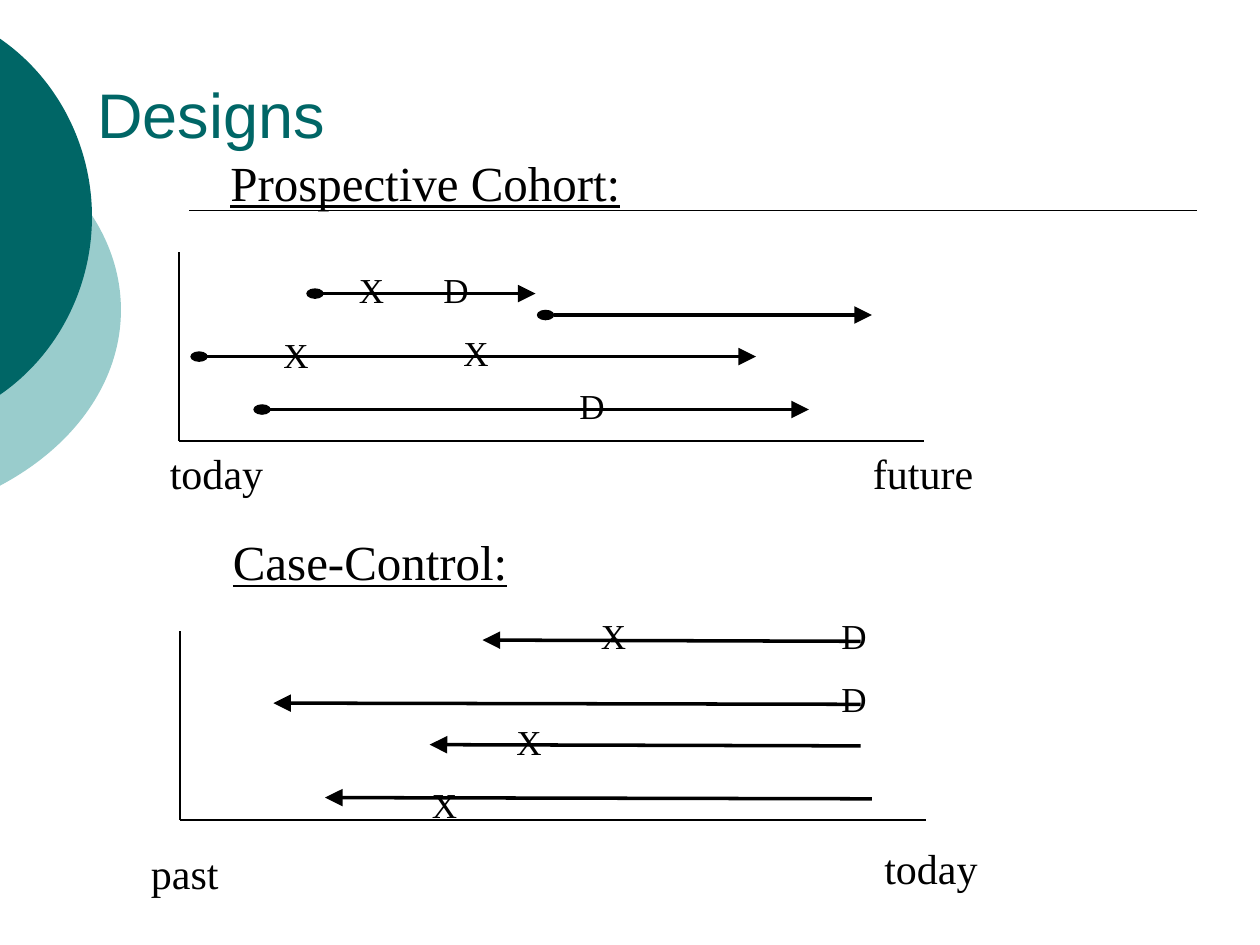
"""Build the slide on prospective cohort and case-control study designs."""
import lxml.etree
import pptx
import pptx.dml.color
import pptx.enum.shapes
import pptx.enum.text
import pptx.oxml.ns
import pptx.util

INK = {"black": "000000", "teal": "006666", "pale": "99CCCC"}
SERIF = "Times New Roman"
WIDE, HIGH = 10, 7.5
LINE_H = {20: 0.43, 24: 0.5, 28: 0.57}

ARCS = [
    ("pale", (-3.54, 0.75, 4.5, 3.42),
     [(-0.01, 1.06), (0.6, 1.38), (0.96, 1.9), (0.96, 2.46)]),
    ("teal", (-2.65, 0, 3.38, 3.45),
     [(-0.01, 0.3), (0.46, 0.62), (0.73, 1.16), (0.73, 1.72)]),
]
RULE = (1.5, 1.67, 9.5, 1.67)
OVAL = {"type": "oval", "w": "med", "len": "lg"}
ARROW = {"type": "triangle", "w": "lg", "len": "lg"}
PANELS = [
    {
        "head": ("Prospective Cohort:", 1.73, 1.16, 3.3),
        "axis": (1.42, 2, 5.91, 1.5),
        "ends": [("today", 1.25, 3.5, 0.94), ("future", 6.83, 3.5, 1)],
        "start": OVAL,
        "spans": [(2.5, 2.33, 4.25, 2.33), (4.33, 2.5, 6.92, 2.5),
                  (1.58, 2.83, 6, 2.83), (2.08, 3.25, 6.42, 3.25)],
        "marks": [("X", 2.75, 2.08, 0.4), ("D", 3.42, 2.08, 0.42),
                  ("X", 2.15, 2.6, 0.4), ("X", 3.58, 2.58, 0.4),
                  ("D", 4.5, 3, 0.33)],
    },
    {
        "head": ("Case-Control:", 1.75, 4.17, 2.38),
        "axis": (1.43, 5.01, 5.92, 1.5),
        "ends": [("past", 1.1, 6.68, 0.74), ("today", 6.92, 6.64, 0.94)],
        "start": None,
        "spans": [(6.83, 5.09, 3.83, 5.08), (6.83, 5.59, 2.17, 5.58),
                  (6.83, 5.92, 3.41, 5.91), (6.92, 6.34, 2.58, 6.33)],
        "marks": [("X", 4.67, 4.83, 0.4), ("D", 6.58, 4.83, 0.42),
                  ("D", 6.58, 5.33, 0.42), ("X", 4, 5.67, 0.4),
                  ("X", 3.33, 6.17, 0.4)],
    },
]


def inch(*nums):
    return [pptx.util.Inches(n) for n in nums]


def tint(name):
    return pptx.dml.color.RGBColor.from_string(INK[name])


def add_node(root, tag, **attrs):
    return lxml.etree.SubElement(root, pptx.oxml.ns.qn(tag), **attrs)


def add_run(para, text, size, face, ink="black", under=None):
    run = para.add_run()
    run.text = text
    run.font.size = pptx.util.Pt(size)
    run.font.name = face
    run.font.color.rgb = tint(ink)
    run.font.underline = under


def add_label(slide, text, left, top, width, size, under=None):
    box = slide.shapes.add_textbox(*inch(left, top, width, LINE_H[size]))
    frame = box.text_frame
    frame.word_wrap = text == "D"
    frame.auto_size = pptx.enum.text.MSO_AUTO_SIZE.SHAPE_TO_FIT_TEXT
    add_run(frame.paragraphs[0], text, size, SERIF, under=under)


def add_line(slide, ends, weight=1, head=None, tail=None):
    kind = pptx.enum.shapes.MSO_CONNECTOR.STRAIGHT
    line = slide.shapes.add_connector(kind, *inch(*ends))
    line.line.color.rgb = tint("black")
    line.line.width = pptx.util.Pt(weight)
    props = line.element.find(pptx.oxml.ns.qn("p:spPr"))
    stroke = props.find(pptx.oxml.ns.qn("a:ln"))
    for tag, tip in (("a:headEnd", head), ("a:tailEnd", tail)):
        if tip:
            add_node(stroke, tag, **tip)
    add_node(props, "a:effectLst")


def add_arc(slide, ink, frame, half):
    left, top, width, height = inch(*frame)
    form = slide.shapes.build_freeform(left, top)
    form.add_line_segments([(left + width, top + height)], close=True)
    shape = form.convert_to_shape()
    shape.shadow.inherit = False
    shape.fill.solid()
    shape.fill.fore_color.rgb = tint(ink)
    shape.line.fill.background()
    mid = half[-1][1]
    dots = half + [(x, 2 * mid - y) for x, y in half[-2::-1]]
    trace = next(shape.element.iter(pptx.oxml.ns.qn("a:path")))
    for node in list(trace):
        trace.remove(node)
    steps = [("a:moveTo", dots[:1]), ("a:cubicBezTo", dots[1:4]),
             ("a:cubicBezTo", dots[4:])]
    for tag, group in steps:
        step = add_node(trace, tag)
        for dot in group:
            x, y = inch(*dot)
            add_node(step, "a:pt", x=str(x - left), y=str(y - top))
    add_node(trace, "a:close")


def add_title(slide, text):
    title = slide.shapes.title
    title.element.getparent().append(title.element)
    title.left, title.top, title.width, title.height = inch(0.67, 0, 8.5, 1.25)
    frame = title.text_frame
    frame.vertical_anchor = pptx.enum.text.MSO_ANCHOR.BOTTOM
    para = frame.paragraphs[0]
    para.alignment = pptx.enum.text.PP_ALIGN.LEFT
    add_run(para, text, 36, "Arial", "teal")


def add_panel(slide, panel):
    left, top, width, height = panel["axis"]
    base = top + height
    add_line(slide, (left, top, left, base))
    add_line(slide, (left, base, left + width, base))
    for span in panel["spans"]:
        add_line(slide, span, 2, panel["start"], ARROW)
    add_label(slide, *panel["head"], 28, True)
    for end in panel["ends"]:
        add_label(slide, *end, 24)
    for mark in panel["marks"]:
        add_label(slide, *mark, 20)


def main():
    deck = pptx.Presentation()
    deck.slide_width, deck.slide_height = inch(WIDE, HIGH)
    slide = deck.slides.add_slide(deck.slide_layouts[5])
    for arc in ARCS:
        add_arc(slide, *arc)
    add_line(slide, RULE)
    add_title(slide, "Designs")
    for panel in PANELS:
        add_panel(slide, panel)
    deck.save("out.pptx")


if __name__ == "__main__":
    main()
